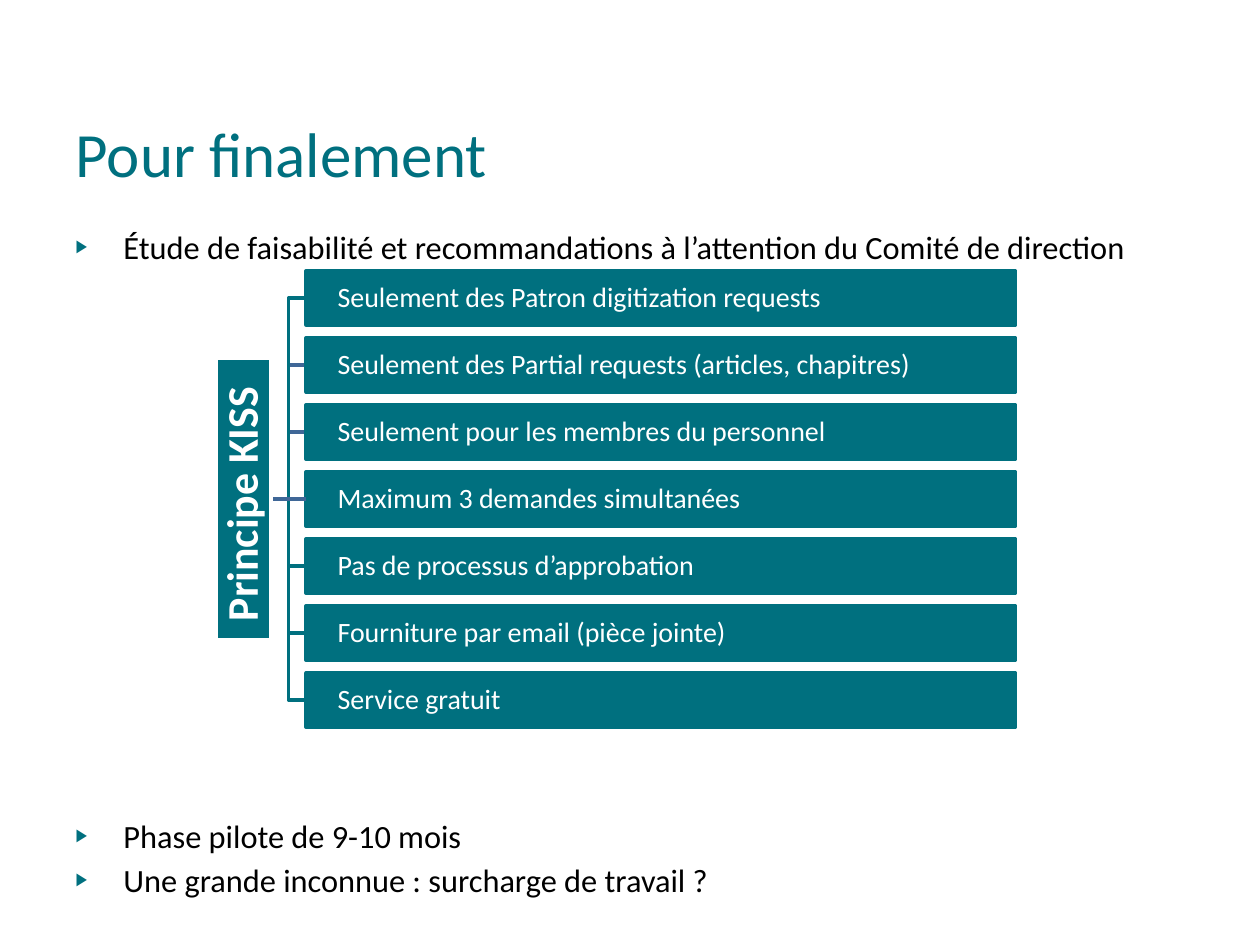
from dataclasses import dataclass

from lxml import etree
from pptx import Presentation
from pptx.dml.color import RGBColor
from pptx.enum import shapes, text
from pptx.oxml import ns
from pptx.util import Inches, Pt


@dataclass(frozen=True)
class Theme:
    font: str = "Calibri"
    teal: str = "00707F"
    blue: str = "3F6797"
    black: str = "000000"
    white: str = "FFFFFF"
    title: float = 36
    body: float = 18.5
    label: float = 25
    row: float = 16
    line: float = 2


THEME = Theme()

# Each point with the space before it, in points
POINTS = [
    ("Étude de faisabilité et recommandations à l’attention du Comité de direction", 0),
    ("Phase pilote de 9-10 mois", 314.5),
    ("Une grande inconnue : surcharge de travail ?", 3.1),
]
# Each rule with the colour of its branch
RULES = [
    ("Seulement des Patron digitization requests", THEME.teal),
    ("Seulement des Partial requests (articles, chapitres)", THEME.blue),
    ("Seulement pour les membres du personnel", THEME.blue),
    ("Maximum 3 demandes simultanées", THEME.blue),
    ("Pas de processus d’approbation", THEME.teal),
    ("Fourniture par email (pièce jointe)", THEME.teal),
    ("Service gratuit", THEME.teal),
]

ROW_LEFT, ROW_TOP, ROW_WIDTH, ROW_HEIGHT = 2.43, 2.15, 5.63, 0.43
ROW_PITCH = 0.532
MIDDLE = len(RULES) // 2
CENTER_Y = ROW_TOP + MIDDLE * ROW_PITCH + ROW_HEIGHT / 2
LABEL_LENGTH = 2.24
TRUNK_LEFT, TRUNK_BEND = 2.15, 2.29


def rgb(color):
    return RGBColor.from_string(color)


def style(para, size, color, bold=False):
    for span in para.runs:
        span.font.name = THEME.font
        span.font.size = Pt(size)
        span.font.bold = bold
        span.font.color.rgb = rgb(color)


def place(shape, left, top, width, height):
    shape.left, shape.top = Inches(left), Inches(top)
    shape.width, shape.height = Inches(width), Inches(height)


def set_line(shape, color):
    shape.line.color.rgb = rgb(color)
    shape.line.width = Pt(THEME.line)


def set_indent(para, margin, first):
    properties = para._p.get_or_add_pPr()
    properties.set("marL", str(Inches(margin)))
    properties.set("indent", str(Inches(first)))
    return properties


def add_bullet(para):
    properties = set_indent(para, 0.38, -0.38)
    color = etree.SubElement(properties, ns.qn("a:buClr"))
    etree.SubElement(color, ns.qn("a:srgbClr"), val=THEME.teal)
    etree.SubElement(properties, ns.qn("a:buSzPct"), val="55000")
    etree.SubElement(properties, ns.qn("a:buFont"), typeface="Arial")
    etree.SubElement(properties, ns.qn("a:buChar"), char="▶")


def fill_title(page):
    title = page.shapes.title
    place(title, 0.5, 0.87, 9, 0.68)
    frame = title.text_frame
    frame.text = "Pour finalement"
    frame.auto_size = text.MSO_AUTO_SIZE.NONE
    frame.vertical_anchor = text.MSO_ANCHOR.MIDDLE
    para = frame.paragraphs[0]
    para.alignment = text.PP_ALIGN.LEFT
    style(para, THEME.title, THEME.teal)


def fill_body(page):
    body = page.placeholders[1]
    place(body, 0.5, 1.75, 9, 5.15)
    frame = body.text_frame
    frame.auto_size = text.MSO_AUTO_SIZE.NONE
    frame.text = "\n".join(words for words, _ in POINTS)
    for para, (_, space) in zip(frame.paragraphs, POINTS):
        add_bullet(para)
        para.space_before = Pt(space)
        style(para, THEME.body, THEME.black)


def add_bar(page, words, bounds, border, inset, size, bold=False):
    bar = page.shapes.add_shape(shapes.MSO_SHAPE.RECTANGLE, *map(Inches, bounds))
    bar.shadow.inherit = False
    bar.fill.solid()
    bar.fill.fore_color.rgb = rgb(THEME.teal)
    set_line(bar, border)
    frame = bar.text_frame
    frame.word_wrap = True
    frame.vertical_anchor = text.MSO_ANCHOR.MIDDLE
    frame.margin_left = frame.margin_right = Inches(inset)
    frame.margin_top = frame.margin_bottom = Inches(inset)
    frame.text = words
    para = frame.paragraphs[0]
    para.line_spacing = 0.9
    style(para, size, THEME.white, bold)
    return bar


def add_label(page):
    center_x = TRUNK_LEFT - ROW_HEIGHT / 2
    bounds = (center_x - LABEL_LENGTH / 2, CENTER_Y - ROW_HEIGHT / 2,
              LABEL_LENGTH, ROW_HEIGHT)
    label = add_bar(page, "Principe KISS ", bounds, THEME.white, 0.02,
                    THEME.label, bold=True)
    label.rotation = 270
    label.text_frame.paragraphs[0].alignment = text.PP_ALIGN.CENTER


def add_row(page, index, words):
    bounds = (ROW_LEFT, ROW_TOP + index * ROW_PITCH, ROW_WIDTH, ROW_HEIGHT)
    row = add_bar(page, words, bounds, THEME.teal, 0.01, THEME.row)
    para = row.text_frame.paragraphs[0]
    para.alignment = text.PP_ALIGN.LEFT
    set_indent(para, 0, 0.24)
    return row


def add_elbow(page, index, color):
    row_y = ROW_TOP + index * ROW_PITCH + ROW_HEIGHT / 2
    corners = [(TRUNK_BEND, CENTER_Y), (TRUNK_BEND, row_y), (ROW_LEFT, row_y)]
    builder = page.shapes.build_freeform(Inches(TRUNK_LEFT), Inches(CENTER_Y))
    builder.add_line_segments([(Inches(x), Inches(y)) for x, y in corners], close=False)
    elbow = builder.convert_to_shape()
    elbow.shadow.inherit = False
    elbow.fill.background()
    set_line(elbow, color)


def add_straight_branch(page, row, color):
    branch = page.shapes.add_connector(
        shapes.MSO_CONNECTOR.STRAIGHT, Inches(TRUNK_LEFT), Inches(CENTER_Y),
        Inches(ROW_LEFT), Inches(CENTER_Y))
    branch.end_connect(row, 1)
    set_line(branch, color)
    etree.SubElement(branch._element.spPr, ns.qn("a:effectLst"))


def add_tree(page):
    for index, (_, color) in reversed(list(enumerate(RULES))):
        if index != MIDDLE:
            add_elbow(page, index, color)
    rows = [add_row(page, index, words) for index, (words, _) in enumerate(RULES)]
    add_straight_branch(page, rows[MIDDLE], RULES[MIDDLE][1])
    add_label(page)


def main():
    deck = Presentation()
    deck.slide_width, deck.slide_height = Inches(10), Inches(7.5)
    page = deck.slides.add_slide(deck.slide_layouts[1])
    fill_title(page)
    fill_body(page)
    add_tree(page)
    deck.save("out.pptx")


if __name__ == "__main__":
    main()
